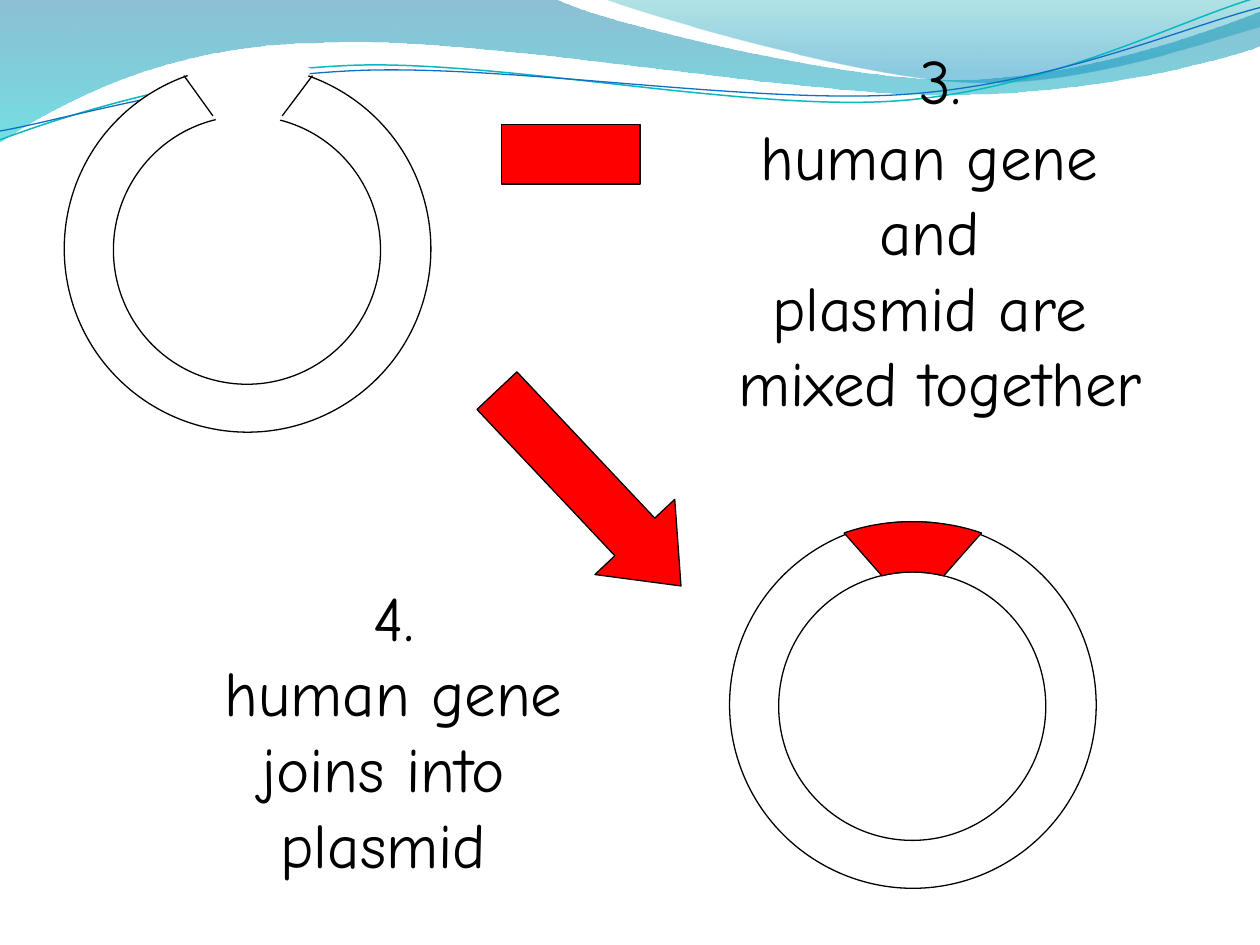
from math import cos, radians, sin

from lxml import etree
from pptx import Presentation
from pptx.dml.color import RGBColor
from pptx.enum.shapes import MSO_CONNECTOR, MSO_SHAPE
from pptx.enum.text import MSO_AUTO_SIZE, PP_ALIGN
from pptx.oxml.ns import qn
from pptx.util import Inches, Pt

RECT, OVAL, ARROW = MSO_SHAPE.RECTANGLE, MSO_SHAPE.OVAL, MSO_SHAPE.DOWN_ARROW
STRAIGHT = MSO_CONNECTOR.STRAIGHT
CENTER = PP_ALIGN.CENTER
FIT = MSO_AUTO_SIZE.SHAPE_TO_FIT_TEXT

BLACK = RGBColor(0x00, 0x00, 0x00)
WHITE = RGBColor(0xFF, 0xFF, 0xFF)
RED = RGBColor(0xFF, 0x00, 0x00)
TEAL = RGBColor(0x0A, 0xB8, 0xBF)
BLUE = RGBColor(0x0F, 0x6F, 0xC6)
TILT = 357.3  # turn of the wave lines, degrees

# Each outline: a start point, then lines (x, y) or curves (x1, y1, x2, y2, x, y)
BAND = [(0, -0.01), (4.4, -0.01), (4.76, 0.17, 6.64, 0.63, 7.58, 0.63),
        (8.53, 0.63, 9.58, 0.26, 10, 0.09), (10.01, 0.36),
        (9.83, 0.44, 8.7, 0.76, 7.46, 0.75), (6.22, 0.75, 3.82, 0.28, 2.57, 0.34),
        (1.29, 0.35, 0.46, 0.83, -0.01, 1.13), (0, -0.01)]
CREST = [(4.79, -0.01), (5.09, 0.11, 6.82, 0.62, 7.69, 0.65),
         (8.56, 0.69, 9.61, 0.32, 10, 0.21), (10, 0), (4.79, -0.01)]
WAVES = [
    ([(0, 1.11), (0.48, 0.93, 1.58, 0.57, 2.77, 0.52),
      (3.95, 0.47, 5.93, 0.89, 7.13, 0.8), (8.33, 0.71, 9.38, 0.15, 9.98, -0.02)],
     (-0.02, 0.22, 10.02, 0.71), TEAL, 0.85),
    ([(0, 1.04), (0.47, 0.96, 1.64, 0.61, 2.83, 0.56),
      (4.03, 0.51, 5.97, 0.83, 7.17, 0.75), (8.36, 0.67, 9.41, 0.21, 10, 0.06)],
     (-0.02, 0.3, 10.03, 0.58), BLUE, 0.75),
]
GENE = [(7, 4.57), (7.07, 4.55, 7.16, 4.54, 7.24, 4.54),
        (7.33, 4.54, 7.41, 4.55, 7.49, 4.57), (7.79, 4.23),
        (7.62, 4.17, 7.43, 4.14, 7.24, 4.14), (7.05, 4.14, 6.87, 4.17, 6.7, 4.23)]
GAP = [(1.74, 0.99), (1.81, 0.96, 1.89, 0.94, 1.97, 0.94),
       (2.05, 0.94, 2.13, 0.96, 2.2, 0.99), (2.48, 0.55),
       (2.32, 0.48, 2.15, 0.44, 1.97, 0.44), (1.79, 0.44, 1.62, 0.48, 1.46, 0.55)]


def paint(shape, fill=None, line=None, width=0.75):
    shape.shadow.inherit = False
    if fill is None:
        shape.fill.background()
    else:
        shape.fill.solid()
        shape.fill.fore_color.rgb = fill
    if line is None:
        shape.line.fill.background()
    else:
        shape.line.color.rgb = line
        shape.line.width = Pt(width)


def fade(shape, stops):
    """Fill top to bottom with stops of (position, colour, opacity %)."""
    shape.fill.gradient()
    shape.fill.gradient_angle = 270
    for stop, (pos, color, _) in zip(shape.fill.gradient_stops, stops):
        stop.position = pos
        stop.color.rgb = RGBColor.from_string(color)
    for node, (_, _, alpha) in zip(shape._element.spPr.iter(qn("a:srgbClr")), stops):
        etree.SubElement(node, qn("a:alpha"), val=str(alpha * 1000))


def add_free(shapes, outline, box, close=True, turn=0, **style):
    """Draw an outline of lines and curves, given in slide inches, in its box."""
    left, top, width, height = box
    right, base = left + width, top + height
    pen = shapes.build_freeform(Inches(left), Inches(top))
    pen.add_line_segments([(Inches(x), Inches(y)) for x, y in
                           ((right, top), (right, base), (left, base))])
    shape = pen.convert_to_shape()
    shape.rotation = turn
    paint(shape, **style)

    # Swap the box outline for the curved one, turned back into the box frame
    mid_x, mid_y = left + width / 2, top + height / 2
    c, s = cos(radians(turn)), sin(radians(turn))
    track = next(shape._element.spPr.iter(qn("a:path")))
    for node in list(track):
        track.remove(node)
    for index, part in enumerate(outline):
        tag = "a:moveTo" if index == 0 else "a:lnTo" if len(part) == 2 else "a:cubicBezTo"
        step = etree.SubElement(track, qn(tag))
        for x, y in zip(part[::2], part[1::2]):
            dx, dy = x - mid_x, y - mid_y
            etree.SubElement(step, qn("a:pt"),
                             x=str(Inches(dx * c + dy * s + width / 2)),
                             y=str(Inches(dy * c - dx * s + height / 2)))
    if close:
        etree.SubElement(track, qn("a:close"))
    return shape


def add_box(shapes, kind, left, top, width, height, fill):
    shape = shapes.add_shape(kind, Inches(left), Inches(top),
                             Inches(width), Inches(height))
    paint(shape, fill, BLACK)
    return shape


def add_line(shapes, x1, y1, x2, y2):
    line = shapes.add_connector(STRAIGHT, Inches(x1), Inches(y1),
                                Inches(x2), Inches(y2))
    line.line.color.rgb = BLACK
    line.line.width = Pt(0.75)
    etree.SubElement(line._element.spPr, qn("a:effectLst"))


def add_text(shapes, lines, left, top, width, height,
             size=36, font="Comic Neue", color=BLACK, align=CENTER):
    box = shapes.add_textbox(Inches(left), Inches(top), Inches(width), Inches(height))
    frame = box.text_frame
    frame.word_wrap = False
    frame.auto_size = FIT
    frame.text = "\n".join(lines)
    for para in frame.paragraphs:
        para.alignment = align
        for run in para.runs:
            run.font.size = Pt(size)
            run.font.name = font
            run.font.color.rgb = color


def add_ring(shapes, left, top):
    """Start a plasmid group with its two circles."""
    ring = shapes.add_group_shape().shapes
    add_box(ring, OVAL, left, top, 2.91, 2.91, WHITE)
    add_box(ring, OVAL, left + 0.39, top + 0.4, 2.12, 2.13, WHITE)
    return ring


def main():
    deck = Presentation()
    deck.slide_width, deck.slide_height = Inches(10), Inches(7.5)
    shapes = deck.slides.add_slide(deck.slide_layouts[6]).shapes

    # Wave decoration
    fade(add_free(shapes, BAND, (-0.01, -0.01, 10.02, 1.14)),
         [(0, "0074A1", 45), (1, "00C6CF", 55)])
    fade(add_free(shapes, CREST, (4.79, -0.01, 5.21, 0.7)),
         [(0, "00A1A9", 30), (0.8, "008BBF", 45)])
    waves = shapes.add_group_shape().shapes
    for outline, box, color, width in WAVES:
        add_free(waves, outline, box, close=False, turn=TILT, line=color, width=width)

    # Loose gene and arrow
    add_box(shapes, RECT, 3.98, 0.99, 1.1, 0.47, RED)
    arrow = add_box(shapes, ARROW, 4.24, 2.81, 0.87, 2.13, RED)
    arrow.adjustments[1] = 0.614
    arrow.rotation = 316.7

    # Step captions
    add_text(shapes, ["3.", "human gene ", "and ", "plasmid are ", "mixed together"],
             5.55, 0.28, 3.82, 3.1)
    add_text(shapes, ["4.", "human gene ", "joins into ", "plasmid "],
             1.61, 4.54, 3.03, 2.5)

    # Plasmid with the gene joined in
    joined = add_ring(shapes, 5.79, 4.14)
    add_free(joined, GENE, (6.1, 4.14, 2.28, 1.42), fill=RED, line=BLACK)

    # Cut plasmid with its open ends
    cut = add_ring(shapes, 0.51, 0.52)
    add_free(cut, GAP, (0.91, 0.44, 2.13, 1.81), fill=WHITE)
    add_line(cut, 1.46, 0.6, 1.69, 0.92)
    add_line(cut, 2.48, 0.6, 2.24, 0.92)

    deck.save("out.pptx")


if __name__ == "__main__":
    main()
